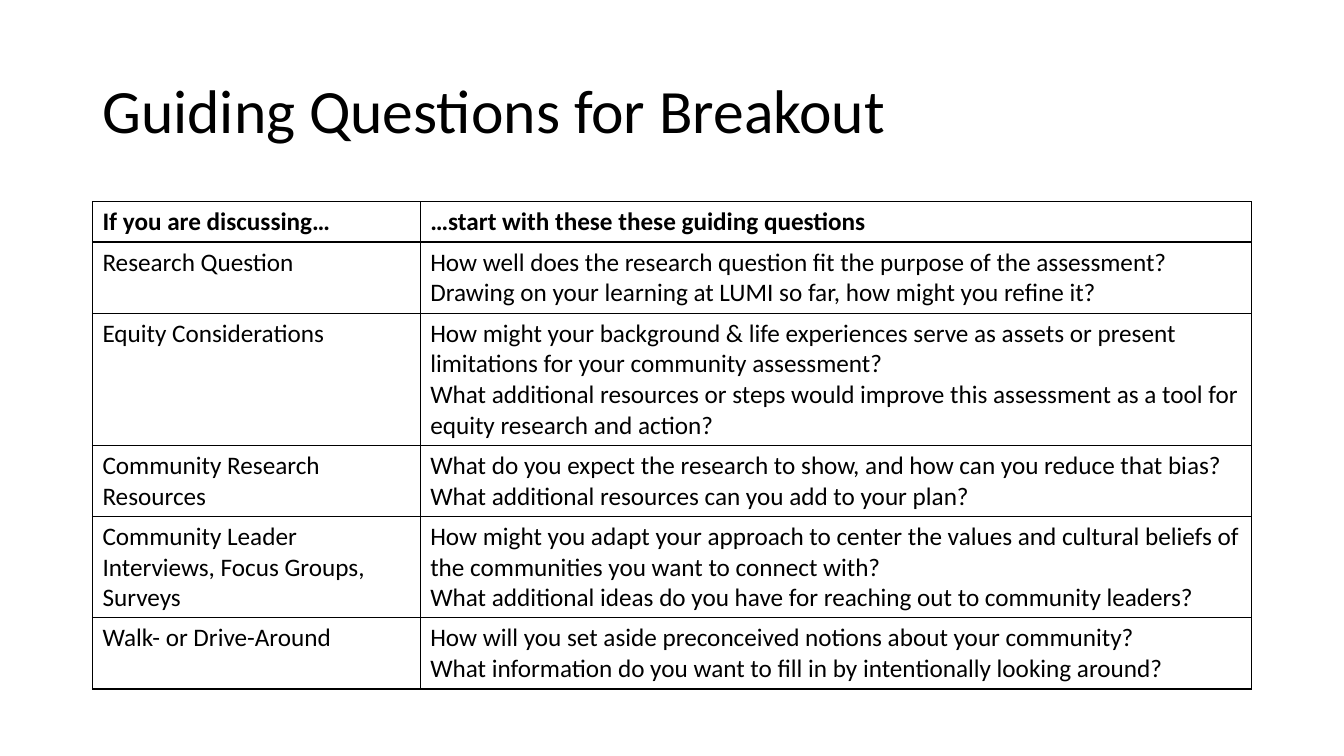
from lxml.etree import SubElement
from pptx import Presentation
from pptx.dml.color import RGBColor
from pptx.enum.text import MSO_ANCHOR
from pptx.oxml.ns import qn
from pptx.util import Cm, Pt

BLACK = RGBColor(0x00, 0x00, 0x00)
FONT = "Calibri"
LEFT, WIDTH = 2.33, 29.21
TOPIC_WIDTH = 8.26
LINE_HEIGHT, CELL_PADDING = 0.77, 0.25

# Topic, guiding questions, number of text lines in the row
GUIDE = [
    ("If you are discussing…", ["…start with these these guiding questions"], 1),
    ("Research Question",
     ["How well does the research question fit the purpose of the assessment?",
      "Drawing on your learning at LUMI so far, how might you refine it?"], 2),
    ("Equity Considerations",
     ["How might your background & life experiences serve as assets or present "
      "limitations for your community assessment?",
      "What additional resources or steps would improve this assessment as a tool "
      "for equity research and action?"], 4),
    ("Community Research Resources",
     ["What do you expect the research to show, and how can you reduce that bias?",
      "What additional resources can you add to your plan?"], 2),
    ("Community Leader Interviews, Focus Groups, Surveys",
     ["How might you adapt your approach to center the values and cultural beliefs "
      "of the communities you want to connect with?",
      "What additional ideas do you have for reaching out to community leaders?"], 3),
    ("Walk- or Drive-Around",
     ["How will you set aside preconceived notions about your community?",
      "What information do you want to fill in by intentionally looking around?"], 2),
]


def write(tf, paragraphs, size=18, bold=False, spacing=None):
    for i, text in enumerate(paragraphs):
        p = tf.paragraphs[0] if i == 0 else tf.add_paragraph()
        if spacing:
            p.line_spacing = spacing
        r = p.add_run()
        r.text = text
        r.font.name = FONT
        r.font.size = Pt(size)
        r.font.bold = bold
        r.font.color.rgb = BLACK


def set_borders(cell):
    tcPr = cell._tc.get_or_add_tcPr()
    for side in ("a:lnL", "a:lnR", "a:lnT", "a:lnB"):
        ln = SubElement(tcPr, qn(side), w=str(Pt(1)))
        fill = SubElement(ln, qn("a:solidFill"))
        SubElement(fill, qn("a:srgbClr"), val=str(BLACK))


def add_title(s, left, top, width, height):
    box = s.shapes.add_textbox(Cm(left), Cm(top), Cm(width), Cm(height))
    tf = box.text_frame
    tf.word_wrap = True
    tf.vertical_anchor = MSO_ANCHOR.MIDDLE
    write(tf, ["Guiding Questions for Breakout"], size=44, spacing=0.9)


def add_guide_table(s, left, top, width):
    heights = [LINE_HEIGHT * lines + CELL_PADDING for _, _, lines in GUIDE]
    frame = s.shapes.add_table(len(GUIDE), 2, Cm(left), Cm(top),
                               Cm(width), Cm(sum(heights)))
    table = frame.table
    table.horz_banding = False
    table.columns[0].width = Cm(TOPIC_WIDTH)
    table.columns[1].width = Cm(width - TOPIC_WIDTH)
    for i, (topic, questions, _) in enumerate(GUIDE):
        table.rows[i].height = Cm(heights[i])
        for cell, paragraphs in zip(table.rows[i].cells, ([topic], questions)):
            write(cell.text_frame, paragraphs, bold=i == 0)
            set_borders(cell)
            cell.fill.background()


def main():
    prs = Presentation()
    prs.slide_width, prs.slide_height = Cm(33.87), Cm(19.05)
    s = prs.slides.add_slide(prs.slide_layouts[6])
    add_title(s, LEFT, 1.01, WIDTH, 3.68)
    add_guide_table(s, LEFT, 5.08, WIDTH)
    prs.save("out.pptx")


if __name__ == "__main__":
    main()
